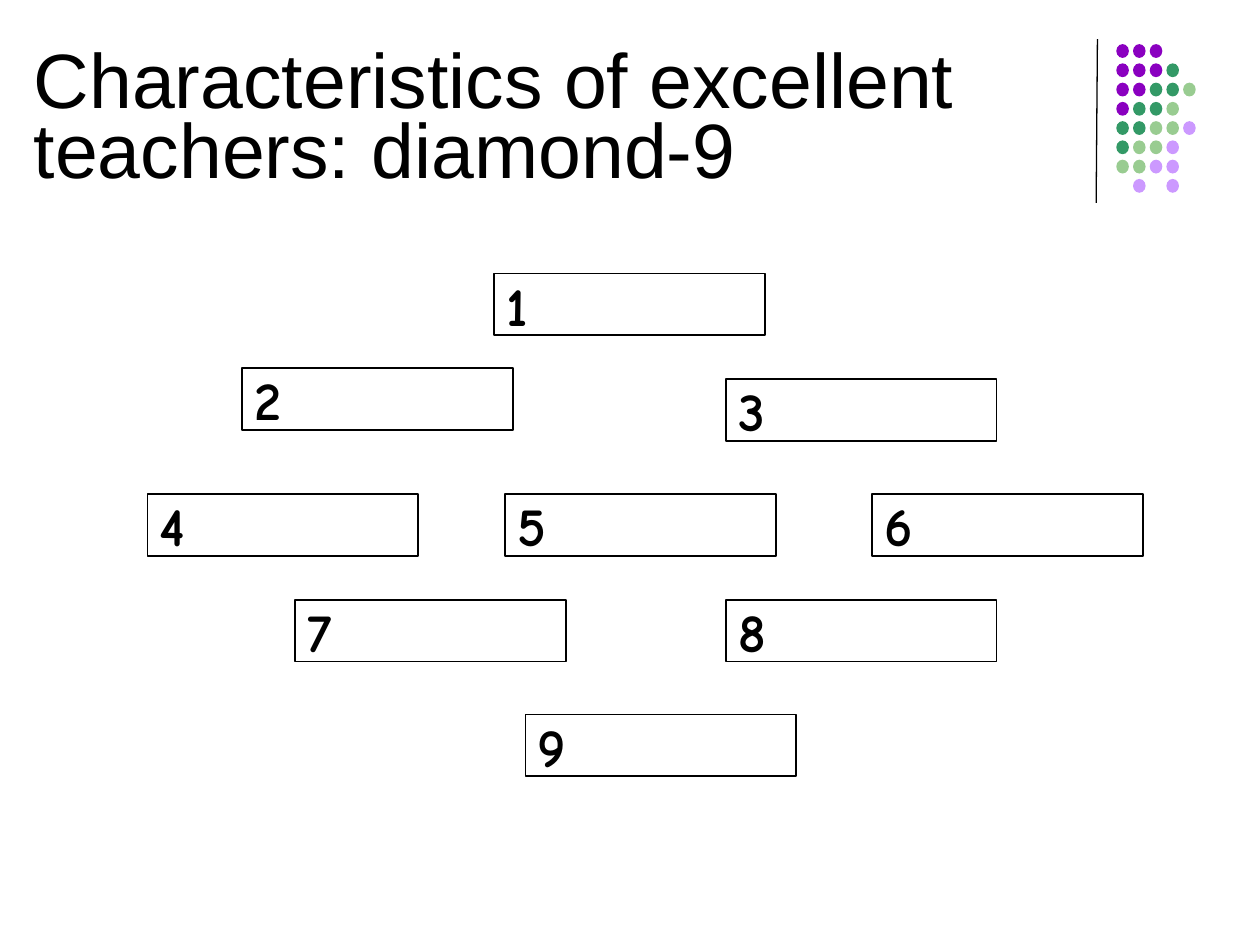
from dataclasses import dataclass

from lxml import etree
from pptx import Presentation
from pptx import util as u
from pptx.dml.color import RGBColor
from pptx.enum import shapes, text
from pptx.oxml.ns import qn


@dataclass(frozen=True)
class Theme:
    ink: str = "000000"
    title_font: str = "Arial"
    title_size: int = 44
    rank_font: str = "Comic Neue"
    rank_size: int = 31
    rule_width: float = 0.75
    card_width: float = 1


T = Theme()
W, H = 10, 7.5
CARD_W, CARD_H = 2.15, 0.49
DOT_COLOURS = {"P": "8A00C0", "G": "339966", "L": "99CC91", "V": "CC99FF"}
DOT_ROWS = ["PPP", "PPPG", "PPGGL", "PGGL", "GGLLV", "GLLV", "LLVV", " V V"]
# Each row of the diamond: cards as (rank, left, top)
DIAMOND = [
    [("1", 3.92, 2.17)],
    [("2", 1.92, 2.92), ("3", 5.76, 3.01)],
    [("4", 1.17, 3.92), ("5", 4.01, 3.92), ("6", 6.92, 3.92)],
    [("7", 2.34, 4.76), ("8", 5.76, 4.76)],
    [("9", 4.17, 5.67)],
]


def rgb(colour):
    return RGBColor.from_string(colour)


def inches(*lengths):
    return [u.Inches(n) for n in lengths]


def write(tf, words, font, size, bold=False):
    tf.word_wrap = True
    tf.vertical_anchor = text.MSO_ANCHOR.MIDDLE
    p = tf.paragraphs[0]
    p.alignment = text.PP_ALIGN.LEFT
    r = p.add_run()
    r.text = words
    r.font.name, r.font.size, r.font.bold = font, u.Pt(size), bold
    r.font.color.rgb = rgb(T.ink)
    return p


def add_rule(s, x1, y1, x2, y2):
    line = s.shapes.add_connector(shapes.MSO_CONNECTOR.STRAIGHT,
                                  *inches(x1, y1, x2, y2))
    line.line.color.rgb = rgb(T.ink)
    line.line.width = u.Pt(T.rule_width)
    etree.SubElement(line._element.spPr, qn("a:effectLst"))


def add_dots(s, left, top, width, height):
    """Fill the box with a grid of dots, five columns wide."""
    dot_w, dot_h = 0.1, 0.11
    step_x = (width - dot_w) / 4
    step_y = (height - dot_h) / (len(DOT_ROWS) - 1)
    group = s.shapes.add_group_shape()
    for row, codes in enumerate(DOT_ROWS):
        for col, code in enumerate(codes):
            if code == " ":
                continue
            dot = group.shapes.add_shape(
                shapes.MSO_SHAPE.OVAL,
                *inches(left + col * step_x, top + row * step_y, dot_w, dot_h))
            dot.shadow.inherit = False
            dot.fill.solid()
            dot.fill.fore_color.rgb = rgb(DOT_COLOURS[code])
            dot.line.fill.background()


def add_title(s, left, top, width, height):
    box = s.shapes.add_textbox(*inches(left, top, width, height))
    p = write(box.text_frame, "Characteristics of excellent teachers: diamond-9",
              T.title_font, T.title_size)
    p.line_spacing = 0.75


def add_card(s, rank, left, top):
    card = s.shapes.add_shape(shapes.MSO_SHAPE.RECTANGLE,
                              *inches(left, top, CARD_W, CARD_H))
    card.shadow.inherit = False
    card.fill.background()
    card.line.color.rgb = rgb(T.ink)
    card.line.width = u.Pt(T.card_width)
    write(card.text_frame, rank, T.rank_font, T.rank_size, bold=True)


def add_diamond(s):
    for row in DIAMOND:
        for card in row:
            add_card(s, *card)


def main():
    prs = Presentation()
    prs.slide_width, prs.slide_height = inches(W, H)
    s = prs.slides.add_slide(prs.slide_layouts[6])
    add_rule(s, 8.71, 0.31, 8.7, 1.61)
    add_dots(s, 8.86, 0.35, 0.63, 1.18)
    add_title(s, 0.17, 0.38, W - 0.17, 1.19)
    add_diamond(s)
    prs.save("out.pptx")


if __name__ == "__main__":
    main()
